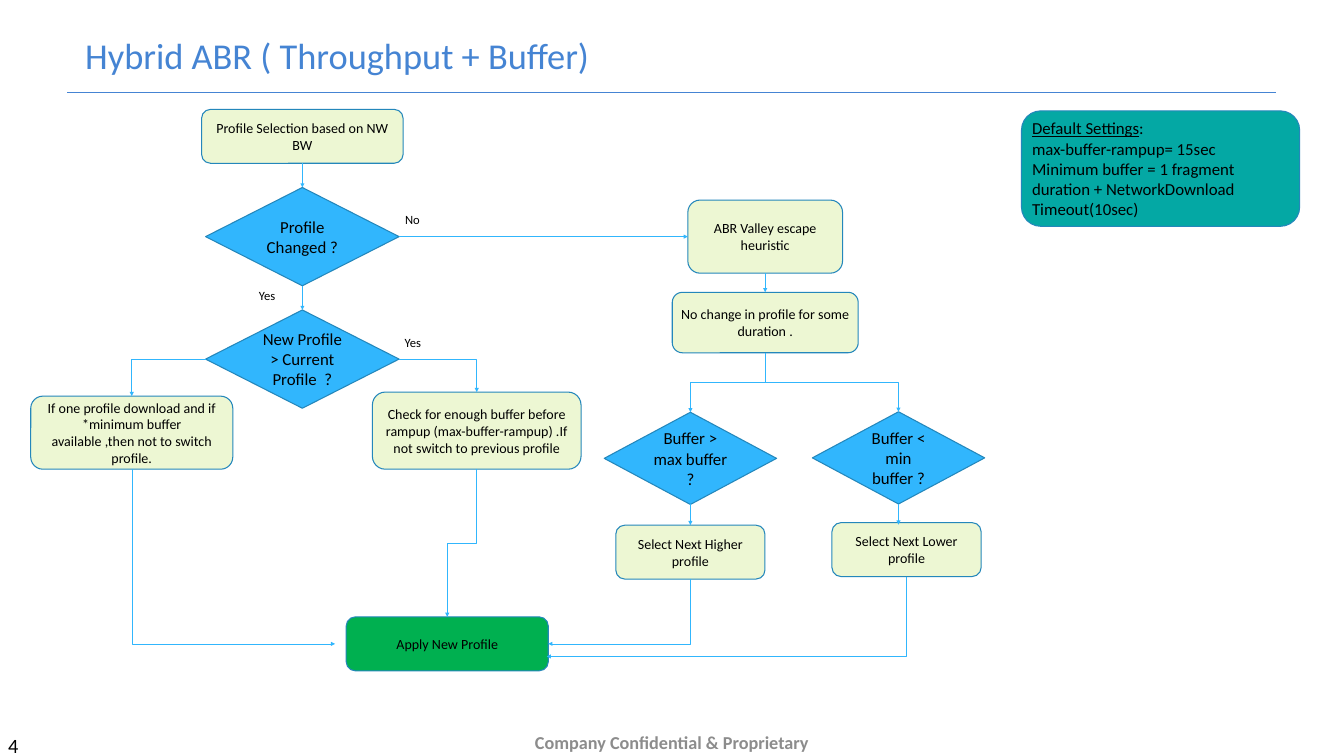
import pptx
import pptx.util
import pptx.dml.color
import pptx.enum.shapes
import pptx.enum.text
import pptx.oxml
import pptx.oxml.ns
from lxml import etree

Inches, Pt = pptx.util.Inches, pptx.util.Pt
SHAPE = pptx.enum.shapes.MSO_SHAPE
CONNECTOR = pptx.enum.shapes.MSO_CONNECTOR
ALIGN, ANCHOR = pptx.enum.text.PP_ALIGN, pptx.enum.text.MSO_ANCHOR
qn = pptx.oxml.ns.qn

FONT = "Calibri"
BLUE, OUTLINE, SKY = "4584D3", "2487BB", "31B6FD"
PALE, GREEN, TEAL = "EDF7D3", "00B050", "04A8A4"
BLACK, GREY = "000000", "8C8C8C"
TOP, LEFT, BOTTOM, RIGHT = range(4)


def rgb(value):
    return pptx.dml.color.RGBColor.from_string(value)


def style(p, size, color=BLACK, align=ALIGN.LEFT, bold=False):
    p.alignment = align
    p.font.name, p.font.size, p.font.bold = FONT, Pt(size), bold
    p.font.color.rgb = rgb(color)


def set_insets(tf, side, end):
    tf.margin_left = tf.margin_right = Inches(side)
    tf.margin_top = tf.margin_bottom = Inches(end)


def add_text(s, box, text, size, wrap=True, **look):
    sp = s.shapes.add_textbox(*map(Inches, box))
    tf = sp.text_frame
    tf.word_wrap = wrap
    tf.text = text
    style(tf.paragraphs[0], size, **look)
    return tf


def add_node(s, origin, box, kind, fill, text, size, align=ALIGN.CENTER):
    x, y, w, h = box
    sp = s.shapes.add_shape(kind, Inches(origin[0] + x), Inches(origin[1] + y),
                            Inches(w), Inches(h))
    sp.shadow.inherit = False
    sp.fill.solid()
    sp.fill.fore_color.rgb = rgb(fill)
    sp.line.color.rgb = rgb(OUTLINE)
    sp.line.width = Pt(1.5)
    tf = sp.text_frame
    tf.word_wrap = True
    tf.vertical_anchor = ANCHOR.MIDDLE
    tf.text = text
    for p in tf.paragraphs:
        style(p, size, align=align)
    return sp


def step(s, origin, box, text, fill=PALE):
    return add_node(s, origin, box, SHAPE.ROUNDED_RECTANGLE, fill, text, 20)


def decision(s, origin, box, text):
    return add_node(s, origin, box, SHAPE.FLOWCHART_DECISION, SKY, text, 24)


def label(s, origin, x, y, text):
    add_text(s, (origin[0] + x, origin[1] + y, 0.53, 0.4), text, 18, wrap=False)


def site(sp, side, dx=0, dy=0):
    """Middle of one side of a shape, moved by dx and dy inches."""
    fx, fy = ((0.5, 0), (0, 0.5), (0.5, 1), (1, 0.5))[side]
    return (int(sp.left + sp.width * fx + Inches(dx)),
            int(sp.top + sp.height * fy + Inches(dy)))


def format_line(c, color=SKY, width=0.79, arrow=True):
    c.line.color.rgb = rgb(color)
    c.line.width = Pt(width)
    if arrow:
        etree.SubElement(c.line._get_or_add_ln(), qn("a:tailEnd"), type="triangle")
    etree.SubElement(c._element.spPr, qn("a:effectLst"))


def arrow(s, a, b, start=BOTTOM, end=TOP):
    c = s.shapes.add_connector(CONNECTOR.STRAIGHT, *site(a, start), *site(b, end))
    c.begin_connect(a, start)
    c.end_connect(b, end)
    format_line(c)


def elbow(s, start, end, down_first=True, preset="bentConnector2"):
    """Bent arrow to a lower point, leaving downwards or sideways."""
    dx, dy = end[0] - start[0], end[1] - start[1]
    cx, cy = (start[0] + end[0]) // 2, (start[1] + end[1]) // 2
    w, h = (abs(dy), abs(dx)) if down_first else (abs(dx), abs(dy))
    c = s.shapes.add_connector(CONNECTOR.ELBOW, cx - w // 2, cy - h // 2,
                               cx + w // 2, cy + h // 2)
    if down_first:
        turn, flip = (90, None) if dx < 0 else (270, "flipH")
    else:
        turn, flip = (180, "flipV") if dx < 0 else (0, None)
    xfrm = c._element.spPr.find(qn("a:xfrm"))
    xfrm.set("rot", str(turn * 60000))
    if flip:
        xfrm.set(flip, "1")
    c._element.spPr.find(qn("a:prstGeom")).set("prst", preset)
    format_line(c)


def add_header(s, box):
    x, y, w, h = box
    title = s.shapes.title
    title.left, title.top, title.width, title.height = map(Inches, box)
    tf = title.text_frame
    tf.text = "Hybrid ABR ( Throughput + Buffer)"
    tf.vertical_anchor = ANCHOR.MIDDLE
    set_insets(tf, 0.36, 0.18)
    style(tf.paragraphs[0], 52, BLUE)
    tf.paragraphs[0].line_spacing = 0.8
    # Rule under the title
    c = s.shapes.add_connector(CONNECTOR.STRAIGHT, Inches(x), Inches(y + 1.32),
                               Inches(x + w), Inches(y + 1.32))
    format_line(c, BLUE, 1, arrow=False)


def add_settings(s, box):
    sp = add_node(s, box[:2], (0, 0, *box[2:]), SHAPE.ROUNDED_RECTANGLE, TEAL,
                  "\nmax-buffer-rampup= 15sec\nMinimum buffer = 1 fragment duration"
                  " + NetworkDownload Timeout(10sec)", 24, ALIGN.LEFT)
    p = sp.text_frame.paragraphs[0]
    for text, underline in (("Default Settings", True), (":", False)):
        r = p.add_run()
        r.text, r.font.underline = text, underline


def add_profile_branch(s, at):
    select = step(s, at, (3.39, 0, 4, 1.07), "Profile Selection based on NW BW")
    changed = decision(s, at, (3.47, 1.55, 3.84, 1.95), "Profile Changed ?")
    higher = decision(s, at, (3.47, 3.98, 3.84, 1.95),
                      "New Profile > Current Profile  ?")
    keep = step(s, at, (0, 5.69, 4.01, 1.45), "If one profile download and if *minimum "
                "buffer available ,then not to switch profile.")
    check = step(s, at, (6.78, 5.61, 4.14, 1.53), "Check for enough buffer before rampup "
                 "(max-buffer-rampup) .If not switch to previous profile")
    apply_new = step(s, at, (6.26, 10.07, 4.01, 1.07), "Apply New Profile", GREEN)
    label(s, at, 7.33, 1.98, "No")
    label(s, at, 4.43, 3.5, "Yes")
    label(s, at, 7.32, 4.42, "Yes")
    arrow(s, select, changed)
    arrow(s, changed, higher)
    elbow(s, site(higher, LEFT), site(keep, TOP), down_first=False)
    elbow(s, site(higher, RIGHT), site(check, TOP), down_first=False)
    elbow(s, site(keep, BOTTOM), site(apply_new, LEFT, dx=-0.22))
    elbow(s, site(check, BOTTOM), site(apply_new, TOP), preset="bentConnector3")
    return changed, apply_new


def add_escape_branch(s, at, changed, apply_new):
    escape = step(s, at, (1.66, 0, 3.07, 1.45), "ABR Valley escape heuristic")
    steady = step(s, at, (1.35, 1.83, 3.69, 1.2), "No change in profile for some duration .")
    over = decision(s, at, (0, 4.21, 3.42, 1.83), "Buffer > max buffer ?")
    under = decision(s, at, (4.13, 4.2, 3.42, 1.83), "Buffer < min buffer ?")
    raise_it = step(s, at, (0.23, 6.45, 2.96, 1.07), "Select Next Higher profile")
    lower_it = step(s, at, (4.52, 6.4, 2.96, 1.07), "Select Next Lower profile")
    arrow(s, changed, escape, RIGHT, LEFT)
    arrow(s, escape, steady)
    for test in (over, under):
        elbow(s, site(steady, BOTTOM), site(test, TOP), preset="bentConnector3")
    arrow(s, over, raise_it)
    # This arrow meets the lower box left of its middle
    c = s.shapes.add_connector(CONNECTOR.STRAIGHT, *site(under, BOTTOM),
                               *site(under, BOTTOM, dy=0.41))
    c.begin_connect(under, BOTTOM)
    format_line(c)
    elbow(s, site(raise_it, BOTTOM), site(apply_new, RIGHT))
    elbow(s, site(lower_it, BOTTOM), site(apply_new, RIGHT, -0.03, 0.25))


def add_footer(s, box):
    x, y, w, h = box
    tf = add_text(s, box, "Company Confidential & Proprietary", 26,
                  color=GREY, align=ALIGN.CENTER, bold=True)
    tf.vertical_anchor = ANCHOR.MIDDLE
    set_insets(tf, 0.36, 0.18)
    # Slide number
    set_insets(add_text(s, (x, y - 0.09, 1, h + 0.09), "4", 29), 0.16, 0.18)


def main():
    prs = pptx.Presentation()
    prs.slide_width, prs.slide_height = Inches(26.67), Inches(15)
    s = prs.slides.add_slide(prs.slide_layouts[5])
    add_header(s, (1.33, 0.51, 24, 1.31))
    add_settings(s, (20.27, 2.2, 5.52, 2.29))
    changed, apply_new = add_profile_branch(s, (0.61, 2.17))
    add_escape_branch(s, (11.99, 3.97), changed, apply_new)
    add_footer(s, (0, 14.46, 26.67, 0.54))
    prs.save("out.pptx")


if __name__ == "__main__":
    main()
